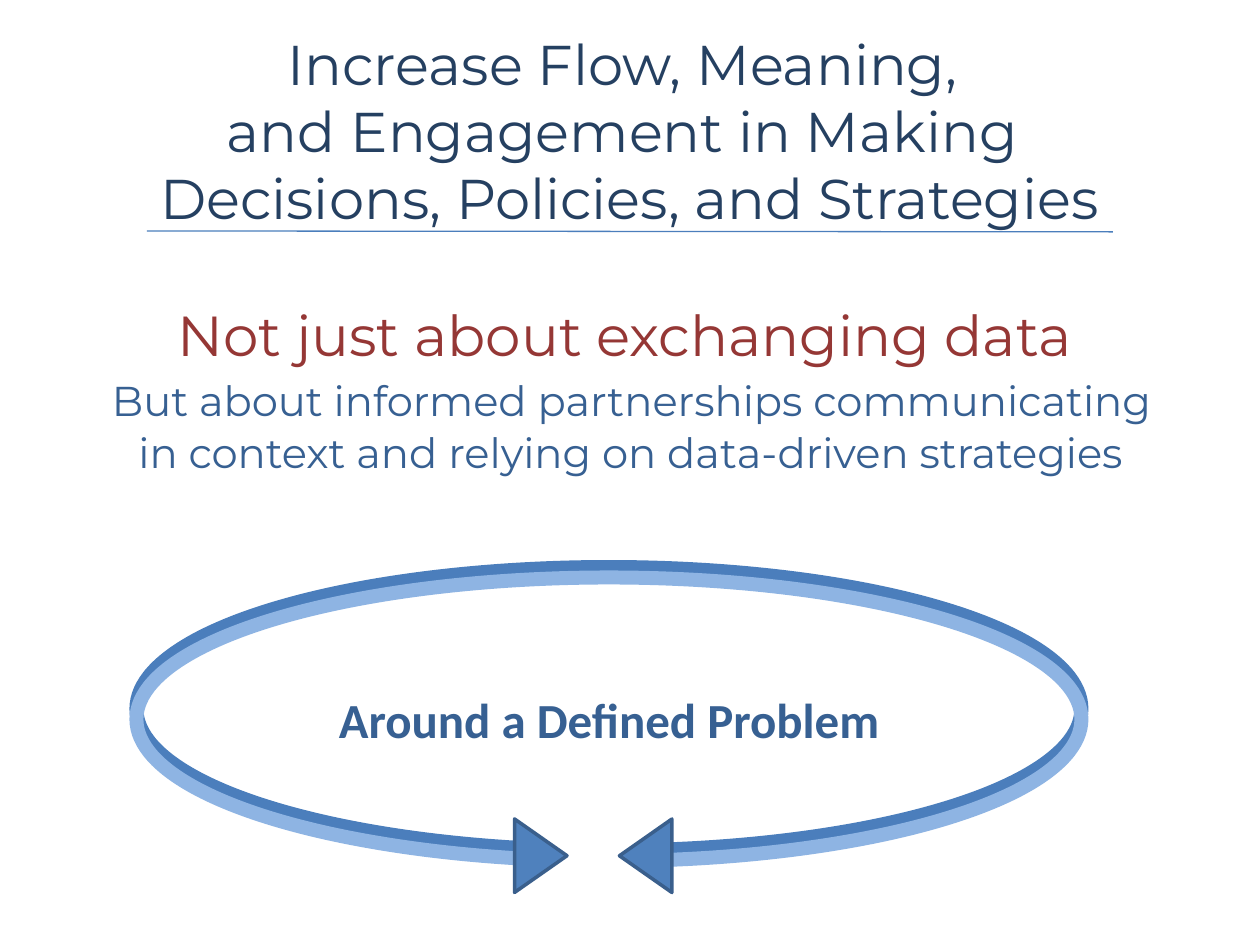
"""Build a slide on shared decision making around a defined problem."""
from dataclasses import dataclass

from lxml import etree
from pptx import Presentation
from pptx.dml.color import RGBColor
from pptx.enum import shapes, text
from pptx.oxml.ns import qn
from pptx.util import Pt


@dataclass(frozen=True)
class Theme:
    heading_font: str = "Montserrat"
    label_font: str = "Calibri"
    background: str = "FFFFFF"
    navy: str = "254061"
    red: str = "953735"
    blue: str = "376092"
    rule: str = "4B7EBC"
    light_ring: str = "8EB4E3"
    arrow_fill: str = "4F81BD"
    arrow_edge: str = "3A5F8C"
    title_size: float = 32
    claim_size: float = 32.2
    label_size: float = 28
    detail_size: float = 23.8
    ring_width: float = 8
    edge_width: float = 2
    rule_width: float = 0.75


THEME = Theme()


def color(value):
    return RGBColor.from_string(value)


def style_font(font, size, ink, name=None, bold=None):
    font.size = Pt(size)
    font.color.rgb = color(ink)
    if name:
        font.name = name
    if bold is not None:
        font.bold = bold


def style_line(line, ink, width):
    line.color.rgb = color(ink)
    line.width = Pt(width)


def place(holder, left, top, width, height, anchor):
    holder.left, holder.top = Pt(left), Pt(top)
    holder.width, holder.height = Pt(width), Pt(height)
    frame = holder.text_frame
    frame.word_wrap = True
    frame.auto_size = text.MSO_AUTO_SIZE.NONE
    frame.vertical_anchor = anchor
    paragraph = frame.paragraphs[0]
    paragraph.alignment = text.PP_ALIGN.CENTER
    return paragraph


def add_run(paragraph, words, size, ink):
    run = paragraph.add_run()
    run.text = words
    style_font(run.font, size, ink)


def add_shape(slide, kind, left, top, width, height, ink, line_width):
    shape = slide.shapes.add_shape(kind, Pt(left), Pt(top), Pt(width), Pt(height))
    shape.shadow.inherit = False
    style_line(shape.line, ink, line_width)
    return shape


def add_ring(slide, top, start, end, ink):
    ring = add_shape(slide, shapes.MSO_SHAPE.ARC, 78, top, 540, 162,
                     ink, THEME.ring_width)
    ring.fill.background()
    ring.adjustments[0], ring.adjustments[1] = start, end
    return ring


def add_arrow(slide, left, rotation):
    arrow = add_shape(slide, shapes.MSO_SHAPE.ISOSCELES_TRIANGLE, left, 474, 42, 30,
                      THEME.arrow_edge, THEME.edge_width)
    arrow.fill.solid()
    arrow.fill.fore_color.rgb = color(THEME.arrow_fill)
    arrow.rotation = rotation


def add_rule(slide, x1, y1, x2, y2):
    rule = slide.shapes.add_connector(
        shapes.MSO_CONNECTOR.STRAIGHT, Pt(x1), Pt(y1), Pt(x2), Pt(y2))
    style_line(rule.line, THEME.rule, THEME.rule_width)
    etree.SubElement(rule._element.spPr, qn("a:effectLst"))


def add_label(ring, words):
    frame = ring.text_frame
    frame.word_wrap = True
    frame.vertical_anchor = text.MSO_ANCHOR.MIDDLE
    label = frame.paragraphs[0]
    label.text = words
    label.alignment = text.PP_ALIGN.CENTER
    style_font(label.font, THEME.label_size, THEME.blue, THEME.label_font, True)


def fill_title(slide):
    title = place(slide.shapes.title, 18, 16.5, 684, 116, text.MSO_ANCHOR.MIDDLE)
    title.text = ("Increase Flow, Meaning, \vand Engagement in Making \v"
                  "Decisions, Policies, and Strategies")
    style_font(title.font, THEME.title_size, THEME.navy, THEME.heading_font)


def fill_message(slide):
    message = place(slide.placeholders[1], 24, 168, 666, 138, text.MSO_ANCHOR.TOP)
    style_font(message.font, THEME.detail_size, THEME.blue, THEME.heading_font)
    add_run(message, "Not just about exchanging data", THEME.claim_size, THEME.red)
    message.add_line_break()
    add_run(message, " ", THEME.label_size, THEME.red)
    add_run(message, "But about informed partnerships communicating",
            THEME.detail_size, THEME.blue)
    message.add_line_break()
    add_run(message, " in context and relying on data-driven strategies",
            THEME.detail_size, THEME.blue)


def main():
    deck = Presentation()
    deck.slide_width, deck.slide_height = Pt(720), Pt(540)
    slide = deck.slides.add_slide(deck.slide_layouts[0])
    slide.background.fill.solid()
    slide.background.fill.fore_color.rgb = color(THEME.background)

    add_ring(slide, 324, 70.15, 44.87, THEME.rule)
    add_rule(slide, 618, 396, 618, 411)
    front_ring = add_ring(slide, 330, 68.69, 44.03, THEME.light_ring)
    add_label(front_ring, "Around a Defined Problem")
    add_arrow(slide, 288, 90)
    add_arrow(slide, 348, 270)
    add_rule(slide, 84, 132, 636, 132.5)
    fill_title(slide)
    fill_message(slide)
    deck.save("out.pptx")


if __name__ == "__main__":
    main()
